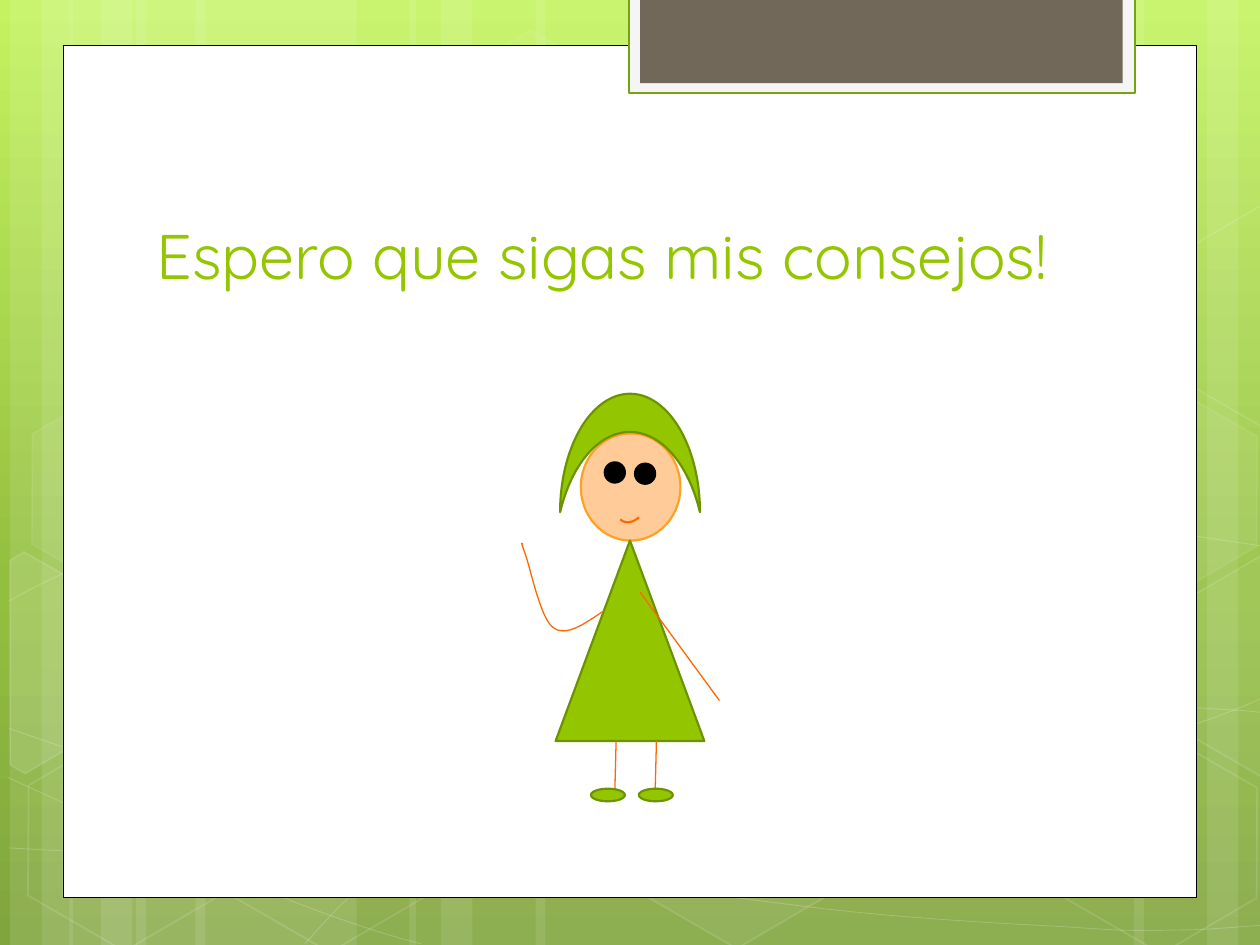
import pptx
import pptx.dml.color
import pptx.enum.shapes
import pptx.enum.text
import pptx.oxml.ns
import pptx.util

KIND = pptx.enum.shapes.MSO_SHAPE
qn = pptx.oxml.ns.qn
GREEN, EDGE, SKIN, WHITE = "94C600", "6D9200", "FF6700", "FFFFFF"

deck = pptx.Presentation()
deck.slide_width = pptx.util.Inches(10)
deck.slide_height = pptx.util.Inches(7.5)
unit = deck.slide_width / 10  # grid of 10 columns by 7.5 rows
slide = deck.slides.add_slide(deck.slide_layouts[5])
shapes = slide.shapes


def paint(item, fill=None, line=None, width=1.25, fade=100, thin=100):
    """Set fill and line; fade and thin are their opacities in percent."""
    coats = [(item.line.fill, line, thin)]
    if hasattr(item, "fill"):
        coats.insert(0, (item.fill, fill, fade))
    for coat, color, share in coats:
        if color is None:
            coat.background()
            continue
        coat.solid()
        coat.fore_color.rgb = pptx.dml.color.RGBColor.from_string(color)
        if share < 100:
            tone = coat._xPr.find(".//" + qn("a:srgbClr"))
            tone.append(tone.makeelement(qn("a:alpha"), {"val": str(share * 1000)}))
    if line:
        item.line.width = pptx.util.Pt(width)
    props = item.element.spPr
    props.append(props.makeelement(qn("a:effectLst"), {}))


def trace(dots, bent=True):
    """Build a closed polygon, or a curve from a start and Bezier triples."""
    dots = [(int(x * unit), int(y * unit)) for x, y in dots]
    pen = shapes.build_freeform(*dots[0])
    pen.add_line_segments(dots[1:], close=not bent)
    form = pen.convert_to_shape()
    if bent:
        legs = list(form.element.iter(qn("a:lnTo")))
        for i in range(0, len(legs), 3):
            curve = legs[i].makeelement(qn("a:cubicBezTo"), {})
            legs[i].addprevious(curve)
            for leg in legs[i:i + 3]:
                curve.append(leg[0])
                leg.getparent().remove(leg)
    return form


# Background gradient
back = slide.background.fill
back.gradient()
back.gradient_angle = 270
stops = slide.element.find(".//" + qn("a:gsLst"))
for stop in list(stops):
    stops.remove(stop)
for place, color in [(0, "C3F35F"), (62, "93BF3F"), (100, "81A53E")]:
    stop = stops.makeelement(qn("a:gs"), {"pos": str(place * 1000)})
    stop.append(stop.makeelement(qn("a:srgbClr"), {"val": color}))
    stops.append(stop)

# Pale full-height bands
bands = [(1.08, 1.75), (0.08, 0.5), (0.33, 0.83), (1.55, 1.75), (0.55, 0.5), (0.8, 0.83),
         (7.33, 1.75), (9.58, 0.5), (9, 0.83), (4.25, 3.08), (3.25, 0.5), (3.5, 0.83)]
for x, w in bands:
    band = shapes.add_shape(KIND.RECTANGLE, int(x * unit), 0, int(w * unit), deck.slide_height)
    paint(band, WHITE, fade=10)

# Thin waves
waves = [
    [(0.07, 6.73), (0.61, 6.76), (1.15, 6.79), (1.9, 6.78), (2.65, 6.77), (3.58, 6.75),
     (4.58, 6.65), (5.58, 6.55), (7, 6.36), (7.92, 6.17), (8.83, 5.98), (9.77, 5.68), (10.07, 5.51)],
    [(0.07, 4.77), (0.36, 4.61), (0.65, 4.46), (1.21, 4.31), (1.78, 4.16), (2.59, 3.94),
     (3.47, 3.87), (4.36, 3.8), (5.44, 3.79), (6.54, 3.87), (7.64, 3.95), (9.47, 4.26), (10.07, 4.34)],
    [(0.06, 6.17), (1.27, 6.72), (2.47, 7.27), (3.34, 7.49)],
    [(0.07, 5.78), (0.38, 5.89), (0.7, 6), (1.28, 6.16), (1.86, 6.31), (2.73, 6.56),
     (3.57, 6.73), (4.4, 6.9), (5.45, 7.08), (6.28, 7.18), (7.11, 7.29), (8, 7.33),
     (8.53, 7.36), (9.05, 7.4), (9.19, 7.38), (9.45, 7.38), (9.71, 7.37), (9.89, 7.35), (10.07, 7.34)],
    [(2.42, 7.49), (2.6, 7.29), (2.78, 7.09), (3.02, 6.91), (3.26, 6.73), (3.6, 6.53),
     (3.88, 6.39), (4.16, 6.25), (4.33, 6.19), (4.7, 6.09), (5.06, 5.99), (5.73, 5.85),
     (6.08, 5.78), (6.44, 5.71), (6.49, 5.71), (6.8, 5.69), (7.11, 5.66), (7.6, 5.63),
     (7.94, 5.62), (8.29, 5.61), (8.86, 5.62), (8.86, 5.62), (8.86, 5.62), (9.53, 5.62),
     (9.53, 5.62), (9.71, 5.63), (9.88, 5.64), (9.97, 5.65), (10.06, 5.66), (10.03, 5.65), (10.06, 5.66)],
]
for wave in waves:
    paint(trace(wave), line=WHITE, width=0.5, thin=20)

# Hexagons, whole and cut by the slide's edge
cells = [(3.34, 0.36, 4, 8), (4.97, 5.89, 6, 12), (0.11, 5.91, 0, 12), (0.14, 3.12, 7, 8),
         (1.74, 5.92, 0, 12), (7.53, 4.53, 10, 12), (8.34, 5.93, 0, 12), (8.34, 3.14, 7, 8)]
for x, y, fade, thin in cells:
    cell = shapes.add_shape(KIND.HEXAGON, *[int(n * unit) for n in (x, y, 1.75, 1.52)])
    cell.rotation = 30
    cell.adjustments[0], cell.adjustments[1] = 0.285, 1.155
    paint(cell, WHITE if fade else None, WHITE, 1, fade, thin)
cuts = [
    ([(0.08, 4.45), (0.19, 4.38), (0.96, 4.82), (0.95, 5.7), (0.2, 6.14), (0.08, 6.07)], 10),
    ([(9.26, 4.85), (10.01, 4.41), (10.09, 4.46), (10.09, 6.13), (10.02, 6.17), (9.26, 5.73)], 4),
    ([(9.26, 2.07), (10.01, 1.63), (10.1, 1.68), (10.09, 3.35), (10.02, 3.39), (9.26, 2.95)], 0),
]
for dots, fade in cuts:
    paint(trace(dots, False), WHITE if fade else None, WHITE, 1, fade, 12)

# Page, tab and title
panels = [(0.5, 0.36, 9, 6.76, WHITE, "000000", 0.5),
          (4.99, -0.02, 4.02, 0.76, "F5F5F5", "74A510", 1.25),
          (5.08, -0.02, 3.83, 0.68, "71685A", None, 0)]
for *box, fill, line, width in panels:
    panel = shapes.add_shape(KIND.RECTANGLE, *[int(n * unit) for n in box])
    paint(panel, fill, line, width)

title = shapes.title
title.left, title.top, title.width, title.height = [int(n * unit) for n in (1.14, 1.12, 7.68, 1.25)]
frame = title.text_frame
frame.word_wrap = True
frame.auto_size = pptx.enum.text.MSO_AUTO_SIZE.NONE
frame.vertical_anchor = pptx.enum.text.MSO_ANCHOR.BOTTOM
frame.paragraphs[0].alignment = pptx.enum.text.PP_ALIGN.LEFT
run = frame.paragraphs[0].add_run()
run.text = "Espero que sigas mis consejos!"
run.font.name = "Quicksand"
run.font.size = pptx.util.Pt(36)
run.font.color.rgb = pptx.dml.color.RGBColor.from_string(GREEN)
shapes._spTree.append(title.element)

# Girl, from back to front
arm = [(4.79, 4.85), (4.64, 4.95), (4.49, 5.06), (4.39, 4.98), (4.29, 4.91), (4.21, 4.51),
       (4.17, 4.4), (4.13, 4.29), (4.14, 4.31), (4.15, 4.32)]
parts = [
    (KIND.OVAL, 4.61, 3.44, 0.79, 0.85, 0, "FFCC99", "FEA022"),
    (KIND.ISOSCELES_TRIANGLE, 4.41, 4.29, 1.18, 1.59, 0, GREEN, EDGE),
    ("limb", 5.08, 4.7, 5.71, 5.56),
    ("arm",),
    (KIND.ARC, 4.89, 3.95, 0.24, 0.18, 136.7, None, SKIN),
    (KIND.OVAL, 4.8, 3.67, 0.16, 0.16, 0, "000000", "000000"),
    (KIND.OVAL, 5.04, 3.68, 0.16, 0.16, 0, "000000", "000000"),
    (KIND.MOON, 4.53, 3.04, 0.94, 1.11, 90, GREEN, EDGE),
    ("limb", 5.21, 5.88, 5.2, 6.27),
    ("limb", 4.89, 5.88, 4.88, 6.27),
    (KIND.OVAL, 4.69, 6.26, 0.27, 0.1, 0, GREEN, EDGE),
    (KIND.OVAL, 5.07, 6.26, 0.27, 0.1, 0, GREEN, EDGE),
]
for kind, *rest in parts:
    box = [int(n * unit) for n in rest[:4]]
    if kind == "arm":
        paint(trace(arm), line=SKIN, width=0.75)
    elif kind == "limb":
        limb = shapes.add_connector(pptx.enum.shapes.MSO_CONNECTOR.STRAIGHT, *box)
        paint(limb, line=SKIN, width=0.75)
    else:
        turn, fill, line = rest[4:]
        part = shapes.add_shape(kind, *box)
        part.rotation = turn
        if kind == KIND.MOON:
            part.adjustments[0] = 0.322
        paint(part, fill, line)

deck.save("out.pptx")
